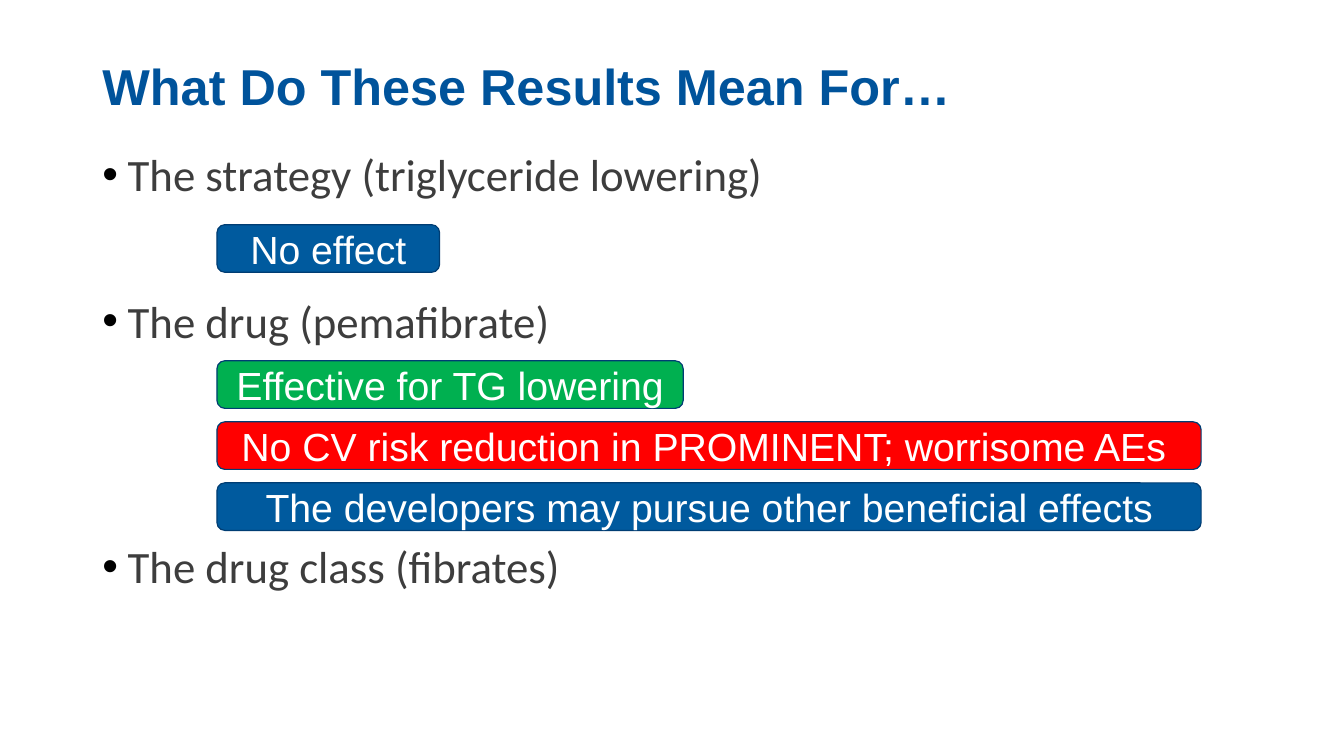
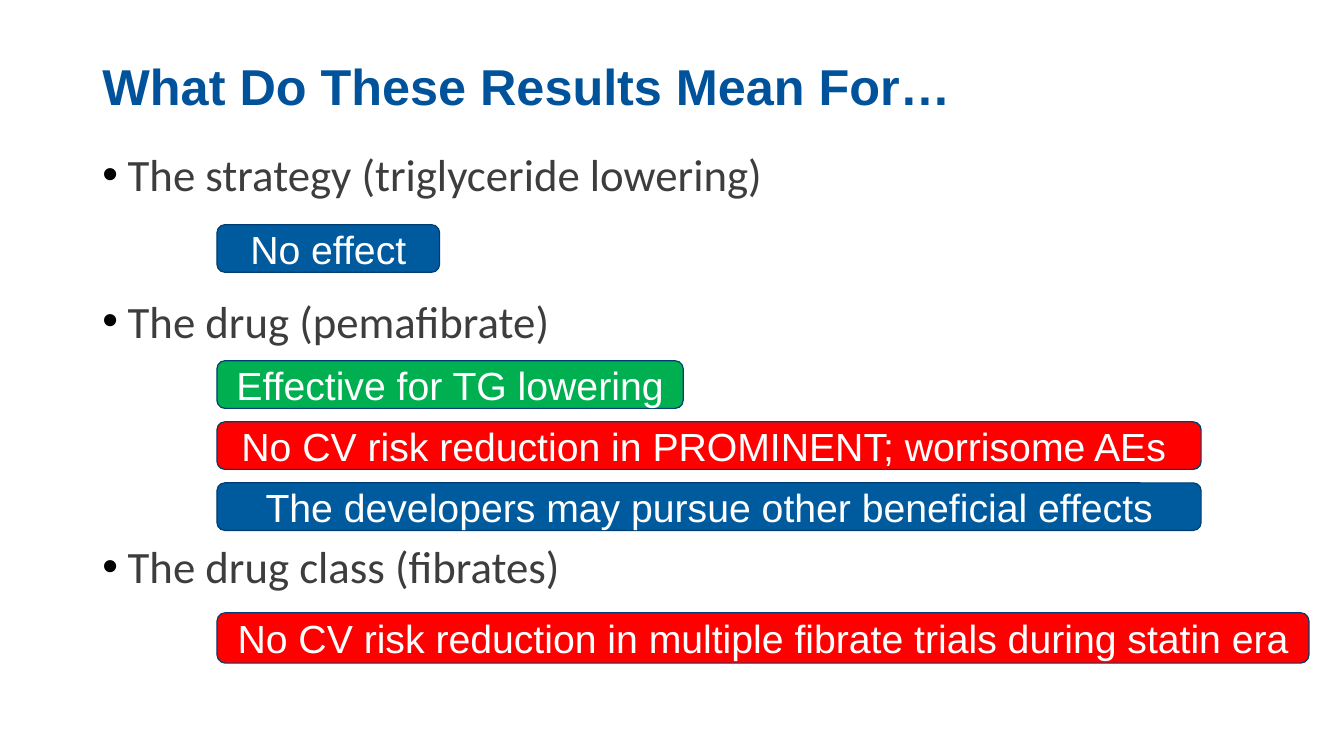
from collections import namedtuple

from lxml.etree import SubElement
from pptx import Presentation
from pptx.dml.color import RGBColor
from pptx.enum.shapes import MSO_SHAPE
from pptx.enum.text import MSO_ANCHOR, MSO_AUTO_SIZE, PP_ALIGN
from pptx.oxml.ns import qn
from pptx.util import Pt

WHITE = RGBColor(0xFF, 0xFF, 0xFF)
BLACK = RGBColor(0x00, 0x00, 0x00)
GREY = RGBColor(0x3D, 0x3D, 0x3D)
TITLE_BLUE = RGBColor(0x00, 0x53, 0x9B)
BLUE = RGBColor(0x00, 0x5A, 0x9E)
NAVY = RGBColor(0x00, 0x3D, 0x73)
RED = RGBColor(0xFF, 0x00, 0x00)
GREEN = RGBColor(0x00, 0xB0, 0x50)

Region = namedtuple("Region", "left top width height")
TITLE_REGION = Region(66, 0, 828, 87)
BODY_REGION = Region(66, 101.5, 828, 385)

TITLE = "What Do These Results Mean For…"
TOPICS = [
    ("The strategy (triglyceride lowering)", 0),
    ("The drug (pemafibrate)", 66),
    ("The drug class (fibrates)", 137),
]

ANSWER_LEFT = 89
ANSWER_HEIGHT = 34
DRUG_TOP = 156.2
DRUG_PITCH = 43.6
STRATEGY_ANSWER = ("No effect", BLUE, 159)
DRUG_ANSWERS = [
    ("Effective for TG lowering", GREEN, 333),
    ("No CV risk reduction in PROMINENT; worrisome AEs ", RED, 703),
    ("The developers may pursue other beneficial effects", BLUE, 703),
]
CLASS_ANSWER = ("No CV risk reduction in multiple fibrate trials during statin era", RED, 780)


def place(box, region):
    """Move a box to a region given in points."""
    box.left, box.top, box.width, box.height = (Pt(length) for length in region)


def prepare_frame(box, anchor):
    """Make the text of a box wrap at its full size."""
    frame = box.text_frame
    frame.word_wrap = True
    frame.auto_size = MSO_AUTO_SIZE.NONE
    frame.vertical_anchor = anchor
    return frame


def write(para, text, *, size, color, font="Arial", bold=False,
          align=PP_ALIGN.LEFT, before=0, spacing=1.0):
    """Write one formatted run into a paragraph."""
    para.alignment = align
    para.space_before = Pt(before)
    para.line_spacing = spacing
    span = para.add_run()
    span.text = text
    span.font.name = font
    span.font.size = Pt(size)
    span.font.bold = bold
    span.font.color.rgb = color


def add_bullet(para, color):
    """Give a paragraph a hanging round bullet."""
    properties = para._p.get_or_add_pPr()
    properties.set("marL", str(Pt(18)))
    properties.set("indent", str(Pt(-18)))
    bullet_color = SubElement(properties, qn("a:buClr"))
    SubElement(bullet_color, qn("a:srgbClr"), val=str(color))
    SubElement(properties, qn("a:buFont"), typeface="Arial")
    SubElement(properties, qn("a:buChar"), char="•")


def add_title(page, region):
    """Fill the title placeholder."""
    box = page.shapes.title
    place(box, region)
    frame = prepare_frame(box, MSO_ANCHOR.BOTTOM)
    write(frame.paragraphs[0], TITLE, size=36, color=TITLE_BLUE, bold=True, spacing=0.9)


def add_topics(page, region):
    """Fill the body placeholder with the bulleted topics."""
    box = page.placeholders[1]
    place(box, region)
    frame = prepare_frame(box, MSO_ANCHOR.TOP)
    for index, (text, before) in enumerate(TOPICS):
        para = frame.add_paragraph() if index else frame.paragraphs[0]
        add_bullet(para, BLACK)
        write(para, text, size=32, color=GREY, font="Calibri", before=before)


def add_answer(page, region, answer, top, height=ANSWER_HEIGHT):
    """Add a rounded answer label at an offset inside the region."""
    text, fill, width = answer
    box = page.shapes.add_shape(
        MSO_SHAPE.ROUNDED_RECTANGLE,
        Pt(region.left + ANSWER_LEFT), Pt(region.top + top), Pt(width), Pt(height))
    box.shadow.inherit = False
    box.fill.solid()
    box.fill.fore_color.rgb = fill
    box.line.color.rgb = NAVY
    box.line.width = Pt(0.85)
    frame = prepare_frame(box, MSO_ANCHOR.MIDDLE)
    write(frame.paragraphs[0], text, size=28, color=WHITE, align=PP_ALIGN.CENTER)


def add_results_page(deck, show_class_answer):
    """Add a results slide, with or without the drug class answer."""
    page = deck.slides.add_slide(deck.slide_layouts[1])
    add_title(page, TITLE_REGION)
    add_topics(page, BODY_REGION)
    add_answer(page, BODY_REGION, STRATEGY_ANSWER, 59)
    for index, answer in enumerate(DRUG_ANSWERS):
        add_answer(page, BODY_REGION, answer, DRUG_TOP + index * DRUG_PITCH)
    if show_class_answer:
        add_answer(page, BODY_REGION, CLASS_ANSWER, 336.2, height=36)


def main():
    """Build and save the deck."""
    deck = Presentation()
    deck.slide_width, deck.slide_height = Pt(960), Pt(540)
    for show_class_answer in (False, True):
        add_results_page(deck, show_class_answer)
    deck.save("out.pptx")


if __name__ == "__main__":
    main()
